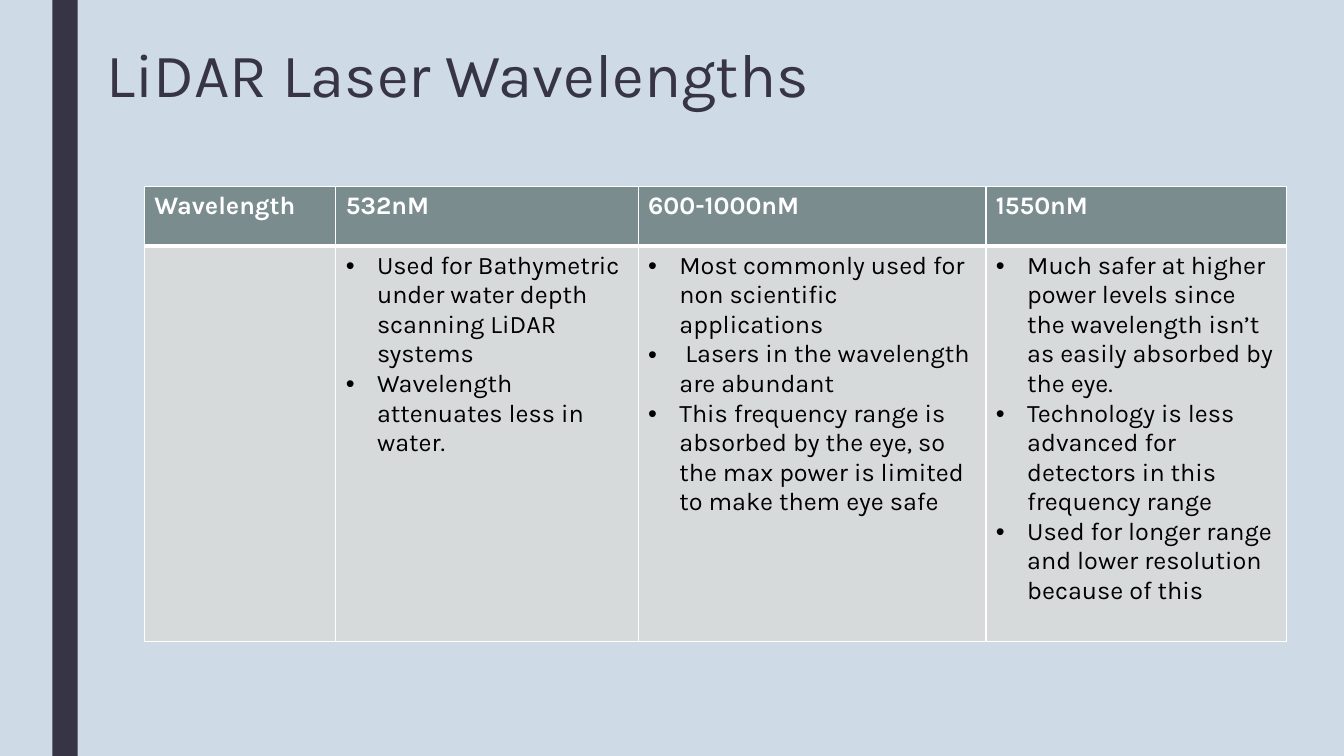
from dataclasses import dataclass

import pptx
import pptx.dml.color
import pptx.enum.shapes
import pptx.enum.text
import pptx.oxml.ns
import pptx.util
from lxml import etree

SLIDE_WIDTH = pptx.util.Inches(13.33)
SLIDE_HEIGHT = pptx.util.Inches(7.5)


@dataclass(frozen=True)
class Theme:
    font: str = "Karla"
    background: str = "CEDBE6"
    accent: str = "373545"
    header_fill: str = "7A8C8E"
    body_fill: str = "D7DADB"
    header_text: str = "FFFFFF"
    body_text: str = "000000"
    border: str = "FFFFFF"
    title_size: int = 44
    table_size: int = 18
    thin_line: int = 1
    thick_line: int = 3


@dataclass(frozen=True)
class Area:
    """A region in percent of the slide's width and height."""
    left: float
    top: float
    width: float
    height: float

    def box(self) -> tuple:
        return (across(self.left), down(self.top),
                across(self.width), down(self.height))


@dataclass(frozen=True)
class Wavelength:
    heading: str
    share: float  # column width, percent of the slide's width
    points: tuple = ()


THEME = Theme()
STRIPE = Area(3.9, 0, 1.88, 100)
TITLE = Area(7.2, 5.33, 86.25, 19.33)
TABLE_LEFT, TABLE_TOP = 10.73, 24.67
ROW_SHARES = (7.87, 52.27)
BULLET_INDENT = pptx.util.Inches(0.31)

WAVELENGTHS = (
    Wavelength("Wavelength", 14.25),
    Wavelength("532nM", 22.5, (
        "Used for Bathymetric under water depth scanning LiDAR systems",
        "Wavelength attenuates less in water.",
    )),
    Wavelength("600-1000nM", 25.88, (
        "Most commonly used for non scientific applications",
        " Lasers in the wavelength are abundant",
        "This frequency range is absorbed by the eye, so the max power is "
        "limited to make them eye safe",
    )),
    Wavelength("1550nM", 22.36, (
        "Much safer at higher power levels since the wavelength isn’t as "
        "easily absorbed by the eye.",
        "Technology is less advanced for detectors in this frequency range",
        "Used for longer range and lower resolution because of this",
    )),
)


def across(percent: float) -> int:
    return round(SLIDE_WIDTH * percent / 100)


def down(percent: float) -> int:
    return round(SLIDE_HEIGHT * percent / 100)


def paint(fill, color: str) -> None:
    fill.solid()
    fill.fore_color.rgb = pptx.dml.color.RGBColor.from_string(color)


def style_text(frame, size: int, color: str, bold: bool = False) -> None:
    for paragraph in frame.paragraphs:
        for run in paragraph.runs:
            run.font.name = THEME.font
            run.font.size = pptx.util.Pt(size)
            run.font.bold = bold
            run.font.color.rgb = pptx.dml.color.RGBColor.from_string(color)


def add_bullet(paragraph) -> None:
    properties = paragraph._p.get_or_add_pPr()
    properties.set("marL", str(BULLET_INDENT))
    properties.set("indent", str(-BULLET_INDENT))
    bullet_font = etree.SubElement(properties, pptx.oxml.ns.qn("a:buFont"))
    bullet_font.set("typeface", "Arial")
    bullet = etree.SubElement(properties, pptx.oxml.ns.qn("a:buChar"))
    bullet.set("char", "•")


def add_borders(cell, bottom_width: int) -> None:
    properties = cell._tc.get_or_add_tcPr()
    for edge in ("lnL", "lnR", "lnT", "lnB"):
        width = bottom_width if edge == "lnB" else THEME.thin_line
        line = etree.SubElement(properties, pptx.oxml.ns.qn(f"a:{edge}"))
        line.set("w", str(pptx.util.Pt(width)))
        solid = etree.SubElement(line, pptx.oxml.ns.qn("a:solidFill"))
        color = etree.SubElement(solid, pptx.oxml.ns.qn("a:srgbClr"))
        color.set("val", THEME.border)


def add_stripe(slide) -> None:
    stripe = slide.shapes.add_shape(
        pptx.enum.shapes.MSO_SHAPE.RECTANGLE, *STRIPE.box())
    stripe.shadow.inherit = False
    paint(stripe.fill, THEME.accent)
    stripe.line.fill.background()


def add_title(slide, wording: str) -> None:
    frame = slide.shapes.add_textbox(*TITLE.box()).text_frame
    frame.word_wrap = True
    frame.vertical_anchor = pptx.enum.text.MSO_ANCHOR.TOP
    frame.text = wording
    frame.paragraphs[0].line_spacing = 0.89
    style_text(frame, THEME.title_size, THEME.accent)


def fill_column(header, body, wavelength: Wavelength) -> None:
    # Borders come before the fill in the cell properties
    add_borders(header, THEME.thick_line)
    paint(header.fill, THEME.header_fill)
    header.text_frame.text = wavelength.heading
    style_text(header.text_frame, THEME.table_size, THEME.header_text, bold=True)

    add_borders(body, THEME.thin_line)
    paint(body.fill, THEME.body_fill)
    if wavelength.points:
        body.text_frame.text = "\n".join(wavelength.points)
        for paragraph in body.text_frame.paragraphs:
            add_bullet(paragraph)
        style_text(body.text_frame, THEME.table_size, THEME.body_text)


def add_comparison(slide) -> None:
    area = Area(TABLE_LEFT, TABLE_TOP,
                sum(wavelength.share for wavelength in WAVELENGTHS),
                sum(ROW_SHARES))
    comparison = slide.shapes.add_table(
        len(ROW_SHARES), len(WAVELENGTHS), *area.box()).table
    for row, share in zip(comparison.rows, ROW_SHARES):
        row.height = down(share)
    for index, wavelength in enumerate(WAVELENGTHS):
        comparison.columns[index].width = across(wavelength.share)
        fill_column(comparison.cell(0, index), comparison.cell(1, index),
                    wavelength)


def main() -> None:
    presentation = pptx.Presentation()
    presentation.slide_width = SLIDE_WIDTH
    presentation.slide_height = SLIDE_HEIGHT
    slide = presentation.slides.add_slide(presentation.slide_layouts[6])

    # Backdrop and heading
    paint(slide.background.fill, THEME.background)
    add_stripe(slide)
    add_title(slide, "LiDAR Laser Wavelengths")

    # Comparison of the wavelengths
    add_comparison(slide)
    presentation.save("out.pptx")


if __name__ == "__main__":
    main()
